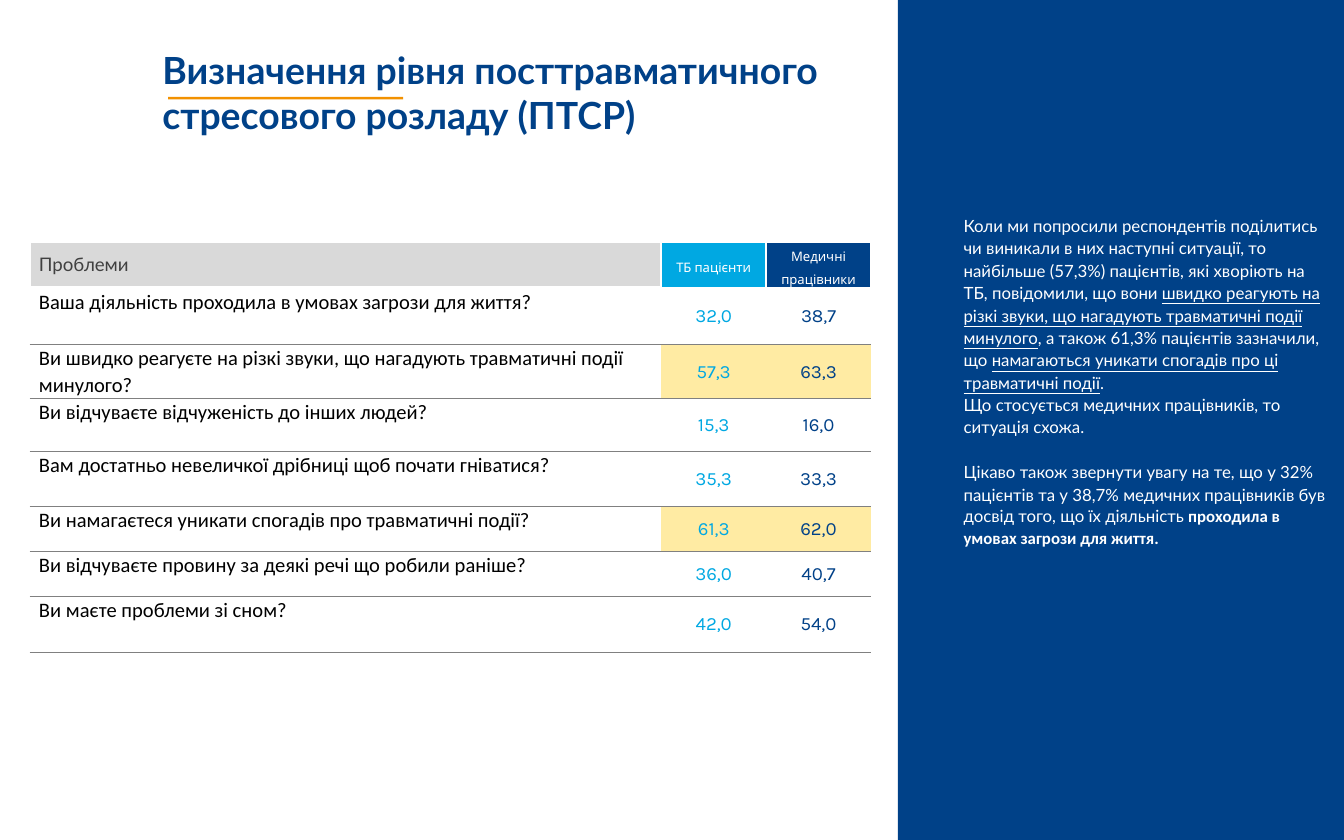
from lxml import etree
from pptx import Presentation
from pptx.dml.color import RGBColor
from pptx.enum.shapes import MSO_SHAPE
from pptx.enum.text import MSO_ANCHOR, MSO_AUTO_SIZE, PP_ALIGN
from pptx.oxml.ns import qn
from pptx.util import Inches, Pt

RECTANGLE = MSO_SHAPE.RECTANGLE
TOP, MIDDLE = MSO_ANCHOR.TOP, MSO_ANCHOR.MIDDLE
LEFT, CENTER = PP_ALIGN.LEFT, PP_ALIGN.CENTER

WHITE = RGBColor(0xFF, 0xFF, 0xFF)
BLACK = RGBColor(0x00, 0x00, 0x00)
NAVY = RGBColor(0x00, 0x41, 0x88)
SKY = RGBColor(0x00, 0xA8, 0xE2)
ORANGE = RGBColor(0xF2, 0x91, 0x00)
YELLOW = RGBColor(0xFF, 0xEB, 0xA3)
LIGHT_GRAY = RGBColor(0xD9, 0xD9, 0xD9)
MID_GRAY = RGBColor(0x80, 0x80, 0x80)
DARK_GRAY = RGBColor(0x40, 0x40, 0x40)

NO_STYLE = "{2D5ABB26-0587-4C30-8999-92F81FD0307C}"
SIDE_INSET = 0.07

TITLE = ["Визначення рівня посттравматичного", "стресового розладу (ПТСР)"]
TITLE_FONT = {"name": "Lato", "size": Pt(20), "bold": True}
LABEL_FONT = {"name": "Lato", "size": Pt(10)}
HEADER_FONT = {"name": "Karla", "size": Pt(7)}
QUESTION_FONT = {"name": "Calibri", "size": Pt(11)}
VALUE_FONT = {"name": "Karla", "size": Pt(10)}
PLAIN = {"name": "Lato", "size": Pt(9)}
UNDERLINED = {**PLAIN, "underline": True}
STRONG = {"name": "Calibri", "size": Pt(9), "bold": True}

COLUMN_WIDTHS = [4.7, 0.78, 0.78]
BLANK_ROW_HEIGHT, HEADER_ROW_HEIGHT = 0.45, 0.32
# question, patients, medical workers, row height, highlighted
QUESTIONS = [
    ("Ваша діяльність проходила в умовах загрози для життя?", "32,0", "38,7", 0.42, False),
    ("Ви швидко реагуєте на різкі звуки, що нагадують травматичні події минулого?",
     "57,3", "63,3", 0.3, True),
    ("Ви відчуваєте відчуженість до інших людей?", "15,3", "16,0", 0.39, False),
    ("Вам достатньо невеличкої дрібниці щоб почати гніватися?", "35,3", "33,3", 0.41, False),
    ("Ви намагаєтеся уникати спогадів про травматичні події?", "61,3", "62,0", 0.34, True),
    ("Ви відчуваєте провину за деякі речі що робили раніше?", "36,0", "40,7", 0.33, False),
    ("Ви маєте проблеми зі сном?", "42,0", "54,0", 0.42, False),
]

# each paragraph: space before in points, then its runs
COMMENTARY = [
    (0, [
        ("Коли ми попросили респондентів поділитись чи виникали в них наступні ситуації, "
         "то найбільше (57,3%) пацієнтів, які хворіють на ТБ, повідомили, що вони ", PLAIN),
        ("швидко реагують на різкі звуки, що нагадують травматичні події минулого", UNDERLINED),
        (", а також 61,3% пацієнтів зазначили, що ", PLAIN),
        ("намагаються уникати спогадів про ці травматичні події", UNDERLINED),
        (".", PLAIN),
    ]),
    (0, [("Що стосується медичних працівників, то ситуація схожа.", PLAIN)]),
    (12, [
        ("Цікаво також звернути увагу на те, що у 32% пацієнтів та у 38,7% медичних "
         "працівників був досвід того, що їх діяльність ", PLAIN),
        ("проходила в умовах загрози для життя.", STRONG),
    ]),
]


def add_run(paragraph, text, font_values, color):
    run = paragraph.add_run()
    run.text = text
    for name, value in font_values.items():
        setattr(run.font, name, value)
    run.font.color.rgb = color


def next_paragraph(text_frame, index):
    return text_frame.add_paragraph() if index else text_frame.paragraphs[0]


def add_block(slide, box, color):
    shape = slide.shapes.add_shape(RECTANGLE, *map(Inches, box))
    shape.shadow.inherit = False
    shape.fill.solid()
    shape.fill.fore_color.rgb = color
    shape.line.fill.background()


def add_plain_table(slide, box, widths, heights):
    """Add a table with no style, banding or header formatting."""
    frame = slide.shapes.add_table(len(heights), len(widths), *map(Inches, box))
    table = frame.table
    table.first_row = table.horz_banding = False
    table._tbl.tblPr.find(qn("a:tableStyleId")).text = NO_STYLE
    for column, width in zip(table.columns, widths):
        column.width = Inches(width)
    for row, height in zip(table.rows, heights):
        row.height = Inches(height)
    return table


def set_borders(cell, sides, color, width):
    """Draw the given sides, listed in the order L, R, T, B; call before filling."""
    properties = cell._tc.get_or_add_tcPr()
    for side in sides:
        line = etree.SubElement(properties, qn(f"a:ln{side}"), w=str(Pt(width)))
        fill = etree.SubElement(line, qn("a:solidFill"))
        etree.SubElement(fill, qn("a:srgbClr"), val=str(color))


def set_cell(cell, lines, font_values, color, anchor=MIDDLE, align=CENTER,
             spacing=1.07, inset=SIDE_INSET, fill=None):
    cell.margin_left = cell.margin_right = Inches(inset)
    cell.margin_top = cell.margin_bottom = 0
    cell.vertical_anchor = anchor
    if fill is None:
        cell.fill.background()
    else:
        cell.fill.solid()
        cell.fill.fore_color.rgb = fill
    for index, text in enumerate(lines):
        paragraph = next_paragraph(cell.text_frame, index)
        paragraph.alignment = align
        paragraph.line_spacing = spacing
        add_run(paragraph, text, font_values, color)


def add_title(slide, box):
    left, top, width, height = box
    add_block(slide, (left + 0.14, top + 0.42, 1.75, 0.02), ORANGE)
    text_frame = slide.shapes.add_textbox(*map(Inches, box)).text_frame
    text_frame.word_wrap = True
    text_frame.auto_size = MSO_AUTO_SIZE.SHAPE_TO_FIT_TEXT
    for index, text in enumerate(TITLE):
        add_run(next_paragraph(text_frame, index), text, TITLE_FONT, NAVY)


def add_survey_table(slide, box):
    heights = [BLANK_ROW_HEIGHT, HEADER_ROW_HEIGHT] + [row[3] for row in QUESTIONS]
    table = add_plain_table(slide, box, COLUMN_WIDTHS, heights)

    for column in range(3):
        set_borders(table.cell(0, column), "LTB", WHITE, 1.5)
    table.cell(0, 0).merge(table.cell(0, 2))

    label, patients, workers = (table.cell(1, column) for column in range(3))
    for cell, width in ((label, 1.5), (patients, 1), (workers, 1)):
        set_borders(cell, "LRTB", WHITE, width)
    set_cell(label, ["Проблеми"], LABEL_FONT, DARK_GRAY, align=LEFT,
             spacing=Pt(12), fill=LIGHT_GRAY)
    set_cell(patients, ["ТБ пацієнти"], HEADER_FONT, WHITE, spacing=1.5, inset=0, fill=SKY)
    set_cell(workers, ["Медичні", "працівники"], HEADER_FONT, WHITE,
             spacing=1.5, inset=0, fill=NAVY)

    for index, (question, patient, worker, _, highlighted) in enumerate(QUESTIONS):
        cells = [table.cell(index + 2, column) for column in range(3)]
        for cell in cells:
            set_borders(cell, "T", MID_GRAY if index else WHITE, 0.25 if index else 1)
            set_borders(cell, "B", MID_GRAY, 0.25)
        fill = YELLOW if highlighted else None
        set_cell(cells[0], [question], QUESTION_FONT, BLACK, anchor=TOP, align=LEFT)
        set_cell(cells[1], [patient], VALUE_FONT, SKY, fill=fill)
        set_cell(cells[2], [worker], VALUE_FONT, NAVY, fill=fill)


def add_commentary(slide, box):
    table = add_plain_table(slide, box, [box[2]], [box[3]])
    cell = table.cell(0, 0)
    set_cell(cell, [], PLAIN, WHITE, anchor=TOP)
    for index, (space_before, runs) in enumerate(COMMENTARY):
        paragraph = next_paragraph(cell.text_frame, index)
        paragraph.line_spacing = Pt(12)
        if space_before:
            paragraph.space_before = Pt(space_before)
        for text, font_values in runs:
            add_run(paragraph, text, font_values, WHITE)


def main():
    presentation = Presentation()
    presentation.slide_width = Inches(10)
    presentation.slide_height = Inches(6.25)
    slide = presentation.slides.add_slide(presentation.slide_layouts[6])
    add_block(slide, (6.68, 0, 3.32, 6.25), NAVY)
    add_commentary(slide, (7.1, 1.59, 2.83, 4.13))
    add_survey_table(slide, (0.22, 1.35, 6.26, 3.47))
    add_title(slide, (1.11, 0.3, 5.43, 0.77))
    presentation.save("out.pptx")


if __name__ == "__main__":
    main()
